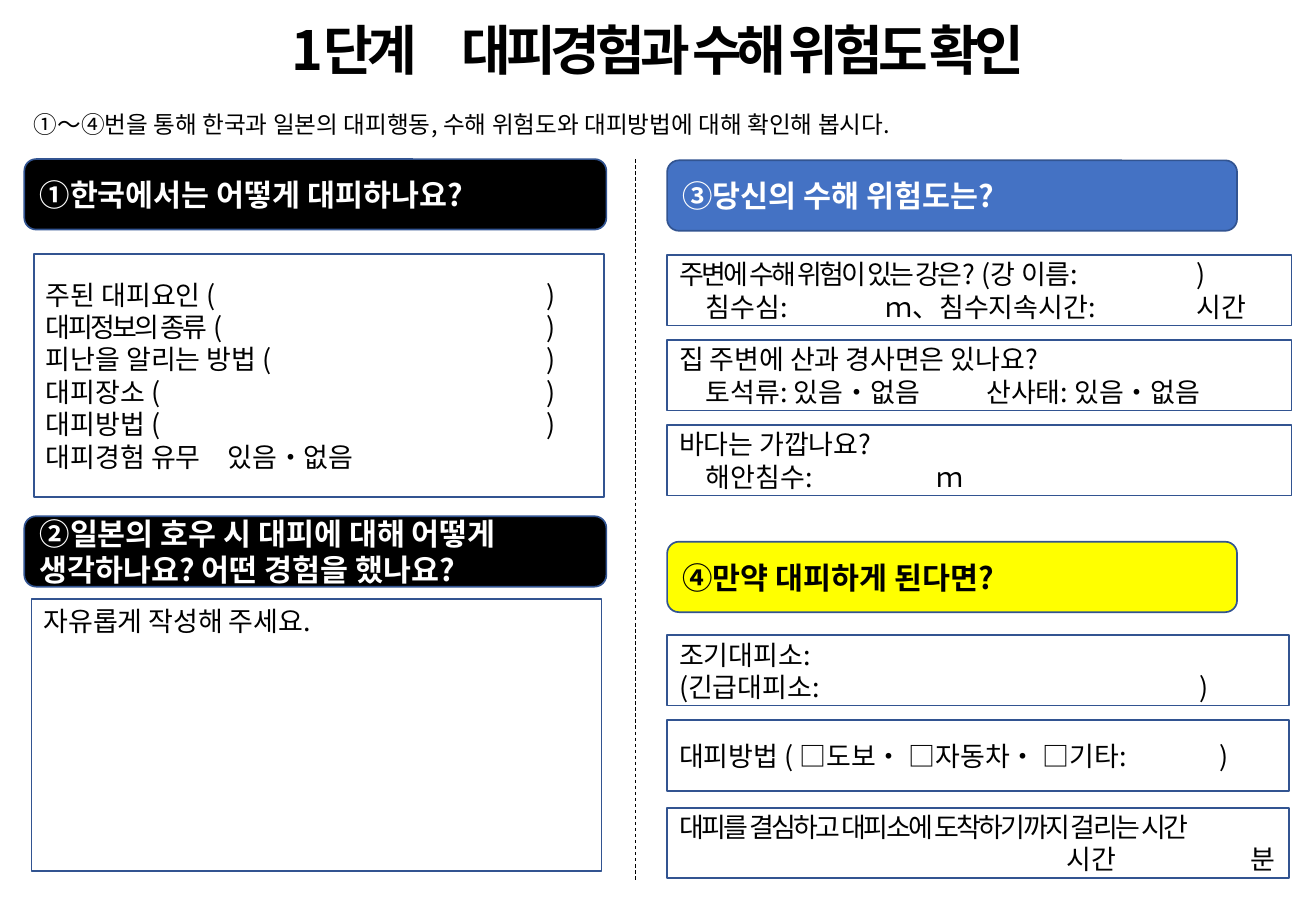
"""Build the evacuation worksheet on flood experience and risk."""
from lxml import etree
from pptx import Presentation
from pptx import util as u
from pptx.dml.color import RGBColor
from pptx.enum import dml, shapes, text
from pptx.oxml import ns

PX = 9144
FONT = "Noto Sans CJK KR"
BLACK = RGBColor(0x00, 0x00, 0x00)
WHITE = RGBColor(0xFF, 0xFF, 0xFF)
NAVY = RGBColor(0x32, 0x54, 0x91)
BLUE = RGBColor(0x44, 0x72, 0xC4)
YELLOW = RGBColor(0xFF, 0xFF, 0x00)

HEADS = [
    (20, 131, 479, BLACK, WHITE, "①한국에서는 어떻게 대피하나요?"),
    (20, 425, 479, BLACK, WHITE,
     "②일본의 호우 시 대피에 대해 어떻게 생각하나요? 어떤 경험을 했나요?"),
    (549, 132, 469, BLUE, WHITE, "③당신의 수해 위험도는?"),
    (549, 446, 469, YELLOW, BLACK, "④만약 대피하게 된다면?"),
]
PAST = [
    ("주된 대피요인 (\t)", [412]),
    ("대피정보의 종류| (\t)", [412]),
    ("피난을 알리는 방법 (\t)", [412]),
    ("대피장소 (\t)", [412]),
    ("대피방법 (\t)", [412]),
    ("대피경험 유무　있음・없음", []),
]
RISKS = [
    (210, 514, [("주변에 수해 위험이 있는 강은?| (강 이름:\t)", [426]),
                ("　침수심:\tｍ、침수지속시간:\t시간", [170, 426])]),
    (280, 514, [("집 주변에 산과 경사면은 있나요?", []),
                ("　토석류: 있음・없음\t산사태: 있음・없음", [253])]),
    (350, 514, [("바다는 가깝나요?", []),
                ("　해안침수:\tｍ", [212])]),
    (523, 512, [("조기대피소:", []),
                ("(긴급대피소:\t)", [428])]),
    (593, 512, [("대피방법 ( □도보・ □자동차・ □기타:\t)", [445])]),
    (665, 512, [("대피를 결심하고 대피소에 도착하기까지 걸리는 시간|", []),
                ("\t시간\t분", [319, 470])]),
]


class Sheet:
    """Hold the style and the current slide."""

    def __init__(self, deck):
        self.slide = deck.slides.add_slide(deck.slide_layouts[5])

    def style(self, run, size, color, bold=False, space=0):
        """Format one run."""
        font = run.font
        font.name, font.size, font.bold = FONT, u.Pt(size), bold
        font.color.rgb = color
        props = run._r.get_or_add_rPr()
        etree.SubElement(props, ns.qn("a:ea"), typeface=FONT)
        if space:
            props.set("spc", str(space))

    def tabs(self, para, stops):
        """Set left tab stops on a paragraph."""
        if stops:
            group = etree.SubElement(para._p.get_or_add_pPr(), ns.qn("a:tabLst"))
            for stop in stops:
                etree.SubElement(group, ns.qn("a:tab"), pos=str(stop * PX), algn="l")

    def title(self, words, x, y, w, h):
        """Place and format the title."""
        item = self.slide.shapes.title
        item.left, item.top, item.width, item.height = (n * PX for n in (x, y, w, h))
        frame = item.text_frame
        frame.text = words
        frame.auto_size = text.MSO_AUTO_SIZE.NONE
        frame.vertical_anchor = text.MSO_ANCHOR.MIDDLE
        para = frame.paragraphs[0]
        para.alignment = text.PP_ALIGN.CENTER
        self.style(para.runs[0], 32, BLACK, True, -300)

    def shape(self, kind, x, y, w, h, fill=None, edge=NAVY):
        """Add a preset shape and return its text frame."""
        item = self.slide.shapes.add_shape(kind, *(n * PX for n in (x, y, w, h)))
        item.shadow.inherit = False
        if fill is None:
            item.fill.background()
        else:
            item.fill.solid()
            item.fill.fore_color.rgb = fill
        if edge is None:
            item.line.fill.background()
        else:
            item.line.color.rgb = edge
            item.line.width = u.Pt(1)
        frame = item.text_frame
        frame.word_wrap = True
        frame.vertical_anchor = text.MSO_ANCHOR.MIDDLE
        return frame

    def head(self, x, y, w, fill, color, words):
        """Add a rounded section heading."""
        frame = self.shape(shapes.MSO_SHAPE.ROUNDED_RECTANGLE, x, y, w, 58, fill)
        frame.text = words
        para = frame.paragraphs[0]
        para.alignment = text.PP_ALIGN.LEFT
        self.style(para.runs[0], 18, color, True)

    def box(self, x, y, w, h, lines, size=16, top=False, **look):
        """Add a box of lines; words before a bar are set tight."""
        frame = self.shape(shapes.MSO_SHAPE.RECTANGLE, x, y, w, h, **look)
        if top:
            frame.vertical_anchor = text.MSO_ANCHOR.TOP
        for i, (words, stops) in enumerate(lines):
            para = frame.add_paragraph() if i else frame.paragraphs[0]
            para.alignment = text.PP_ALIGN.LEFT
            self.tabs(para, stops)
            tight, bar, rest = words.partition("|")
            para.text = tight
            self.style(para.runs[0], size, BLACK, space=-150 if bar else 0)
            if rest:
                run = para.add_run()
                run.text = rest
                self.style(run, size, BLACK)

    def rule(self, x, top, base):
        """Add a dashed upright line."""
        item = self.slide.shapes.add_connector(
            shapes.MSO_CONNECTOR.STRAIGHT, x * PX, top * PX, x * PX, base * PX)
        item.line.color.rgb = BLACK
        item.line.width = u.Pt(0.5)
        item.line.dash_style = dml.MSO_LINE.DASH
        etree.SubElement(item._element.spPr, ns.qn("a:effectLst"))


def main():
    """Build and save the slide."""
    deck = Presentation()
    deck.slide_width, deck.slide_height = 1083 * PX, 750 * PX
    sheet = Sheet(deck)
    sheet.title("1단계　대피경험과 수해 위험도 확인", 0, 5, 1083, 71)
    intro = "①～④번을 통해 한국과 일본의 대피행동, 수해 위험도와 대피방법에 대해 확인해 봅시다."
    sheet.box(18, 80, 1043, 45, [(intro, [])], size=14, fill=WHITE, edge=None)
    sheet.rule(523, 131, 726)
    for head in HEADS:
        sheet.head(*head)
    sheet.box(28, 209, 469, 200, PAST)
    sheet.box(26, 493, 469, 224, [("자유롭게 작성해 주세요.", [])], top=True)
    for y, w, lines in RISKS:
        sheet.box(549, y, w, 58, lines)
    deck.save("out.pptx")


if __name__ == "__main__":
    main()
